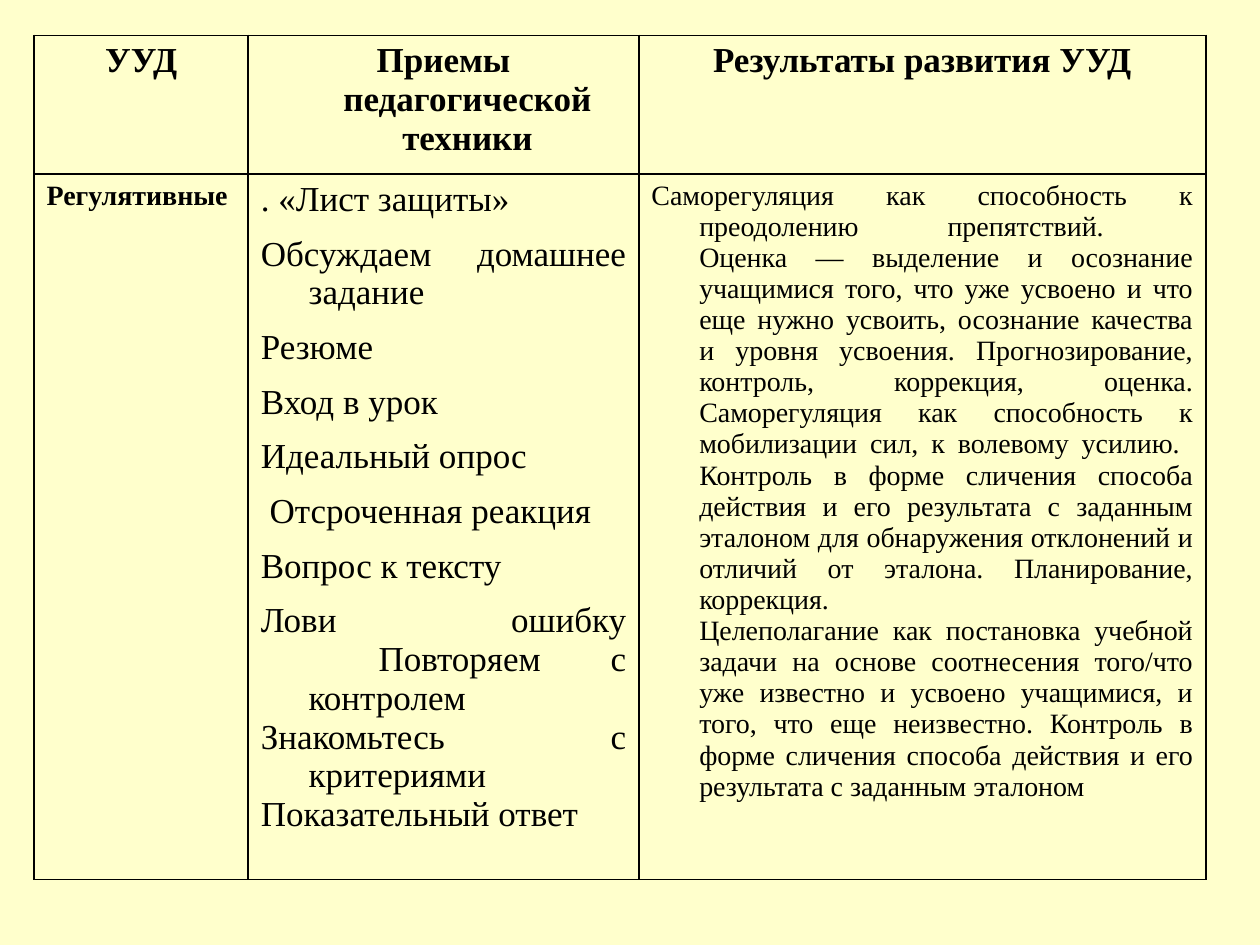
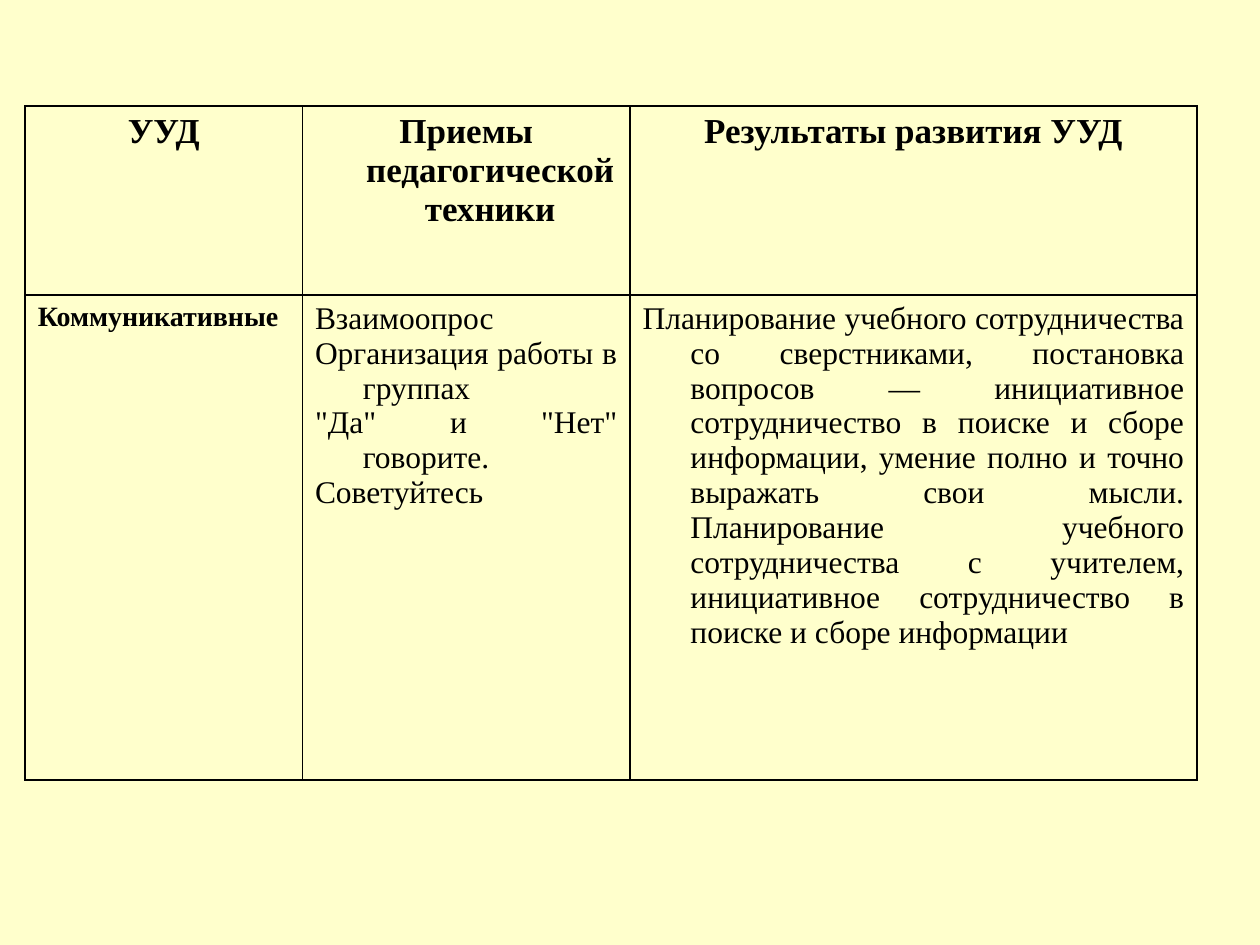
import copy
from dataclasses import dataclass

import pptx
import pptx.dml.color
import pptx.enum.text
import pptx.oxml
import pptx.oxml.ns
import pptx.util

Inches = pptx.util.Inches
Pt = pptx.util.Pt
RGBColor = pptx.dml.color.RGBColor
Align = pptx.enum.text.PP_ALIGN
qn = pptx.oxml.ns.qn


@dataclass(frozen=True)
class Theme:
    background: str = "FFFFCC"
    ink: str = "000000"
    font: str = "Times New Roman"
    heading_size: int = 20
    skill_size: int = 16
    border: float = 1
    hanging: float = 0.38


THEME = Theme()
HEADINGS = ["УУД", "Приемы педагогической техники", "Результаты развития УУД"]

# Techniques: those in the first list are set apart, the rest follow closely
SPACED_TECHNIQUES = [
    ". «Лист защиты»",
    "Обсуждаем домашнее задание",
    "Резюме",
    "Вход в урок",
    "Идеальный опрос",
    " Отсроченная реакция",
    "Вопрос к тексту",
]
CLOSE_TECHNIQUES = [
    "Лови ошибку\n Повторяем с контролем",
    "Знакомьтесь с критериями",
    "Показательный ответ",
]
REGULATIVE_RESULTS = (
    "Саморегуляция как способность к преодолению препятствий. \n"
    "Оценка — выделение и осознание учащимися того, что уже усвоено и что еще "
    "нужно усвоить, осознание качества и уровня усвоения. Прогнозирование, "
    "контроль, коррекция, оценка. Саморегуляция как способность к мобилизации "
    "сил, к волевому усилию. \n"
    "Контроль в форме сличения способа действия и его результата с заданным "
    "эталоном для обнаружения отклонений и отличий от эталона. Планирование, "
    "коррекция. \n"
    "Целеполагание как постановка учебной задачи на основе соотнесения того/что "
    "уже известно и усвоено учащимися, и того, что еще неизвестно. Контроль в "
    "форме сличения способа действия и его результата с заданным эталоном"
)
COMMUNICATIVE_TECHNIQUES = [
    "Взаимоопрос",
    "Организация работы в группах",
    '"Да" и "Нет" говорите. ',
    "Советуйтесь",
]
COMMUNICATIVE_RESULTS = (
    "Планирование учебного сотрудничества со сверстниками, постановка вопросов "
    "— инициативное сотрудничество в поиске и сборе информации, умение полно и "
    "точно выражать свои мысли. Планирование учебного сотрудничества с учителем, "
    "инициативное сотрудничество в поиске и сборе информации"
)


def add_page(deck):
    page = deck.slides.add_slide(deck.slide_layouts[6])
    page.background.fill.solid()
    page.background.fill.fore_color.rgb = RGBColor.from_string(THEME.background)
    return page


def border_cell(cell):
    properties = cell._tc.get_or_add_tcPr()
    for side in ("lnL", "lnR", "lnT", "lnB"):
        properties.append(pptx.oxml.parse_xml(
            f'<a:{side} {pptx.oxml.ns.nsdecls("a")} w="{Pt(THEME.border)}">'
            f'<a:solidFill><a:srgbClr val="{THEME.ink}"/></a:solidFill></a:{side}>'))
    cell.fill.background()


def write_paragraph(paragraph, text, size, bold, align, gap):
    paragraph.text = text
    for name, value in {"alignment": align, "space_after": Pt(gap)}.items():
        setattr(paragraph, name, value)
    # Hanging indent
    indents = paragraph._p.get_or_add_pPr()
    indents.set("marL", str(Inches(THEME.hanging)))
    indents.set("indent", str(-Inches(THEME.hanging)))
    font_format = {"name": THEME.font, "size": Pt(size), "bold": bold}
    for run in paragraph.runs:
        for name, value in font_format.items():
            setattr(run.font, name, value)
        run.font.color.rgb = RGBColor.from_string(THEME.ink)
    # Line breaks take the type size of their text
    for line_break in paragraph._p.findall(qn("a:br")):
        line_break.append(copy.deepcopy(paragraph.runs[0]._r.rPr))


def fill_cell(cell, texts, size, bold=False, align=Align.JUSTIFY, gaps=None):
    border_cell(cell)
    frame = cell.text_frame
    for index, text in enumerate(texts):
        paragraph = frame.add_paragraph() if index else frame.paragraphs[0]
        write_paragraph(paragraph, text, size, bold, align,
                        gaps[index] if gaps else 0)


def add_skill_table(page, left, top, widths, heights):
    skills = page.shapes.add_table(
        len(heights), len(widths), Inches(left), Inches(top),
        Inches(sum(widths)), Inches(sum(heights))).table
    for name in ("first_row", "horz_banding"):
        setattr(skills, name, False)
    for column, width in zip(skills.columns, widths):
        column.width = Inches(width)
    for row, height in zip(skills.rows, heights):
        row.height = Inches(height)
    for index, heading in enumerate(HEADINGS):
        fill_cell(skills.cell(0, index), [heading], THEME.heading_size,
                  bold=True, align=Align.CENTER)
    return skills


def fill_skill_row(skills, skill, techniques, technique_size, results,
                   results_size, gaps=None):
    fill_cell(skills.cell(1, 0), [skill], THEME.skill_size, bold=True)
    fill_cell(skills.cell(1, 1), techniques, technique_size, gaps=gaps)
    fill_cell(skills.cell(1, 2), [results], results_size)


def main():
    deck = pptx.Presentation()
    deck.slide_width, deck.slide_height = Inches(10), Inches(7.5)

    # Regulative skills
    regulative = add_skill_table(add_page(deck), 0.27, 0.28,
                                 [1.7, 3.1, 4.5], [1.1, 5.6])
    gaps = [9] * len(SPACED_TECHNIQUES) + [0] * len(CLOSE_TECHNIQUES)
    fill_skill_row(regulative, "Регулятивные",
                   SPACED_TECHNIQUES + CLOSE_TECHNIQUES, 20,
                   REGULATIVE_RESULTS, 16, gaps)

    # Communicative skills
    communicative = add_skill_table(add_page(deck), 0.2, 0.84,
                                    [2.2, 2.6, 4.5], [1.5, 3.85])
    fill_skill_row(communicative, "Коммуникативные",
                   COMMUNICATIVE_TECHNIQUES, 18, COMMUNICATIVE_RESULTS, 18)

    deck.save("out.pptx")


if __name__ == "__main__":
    main()
